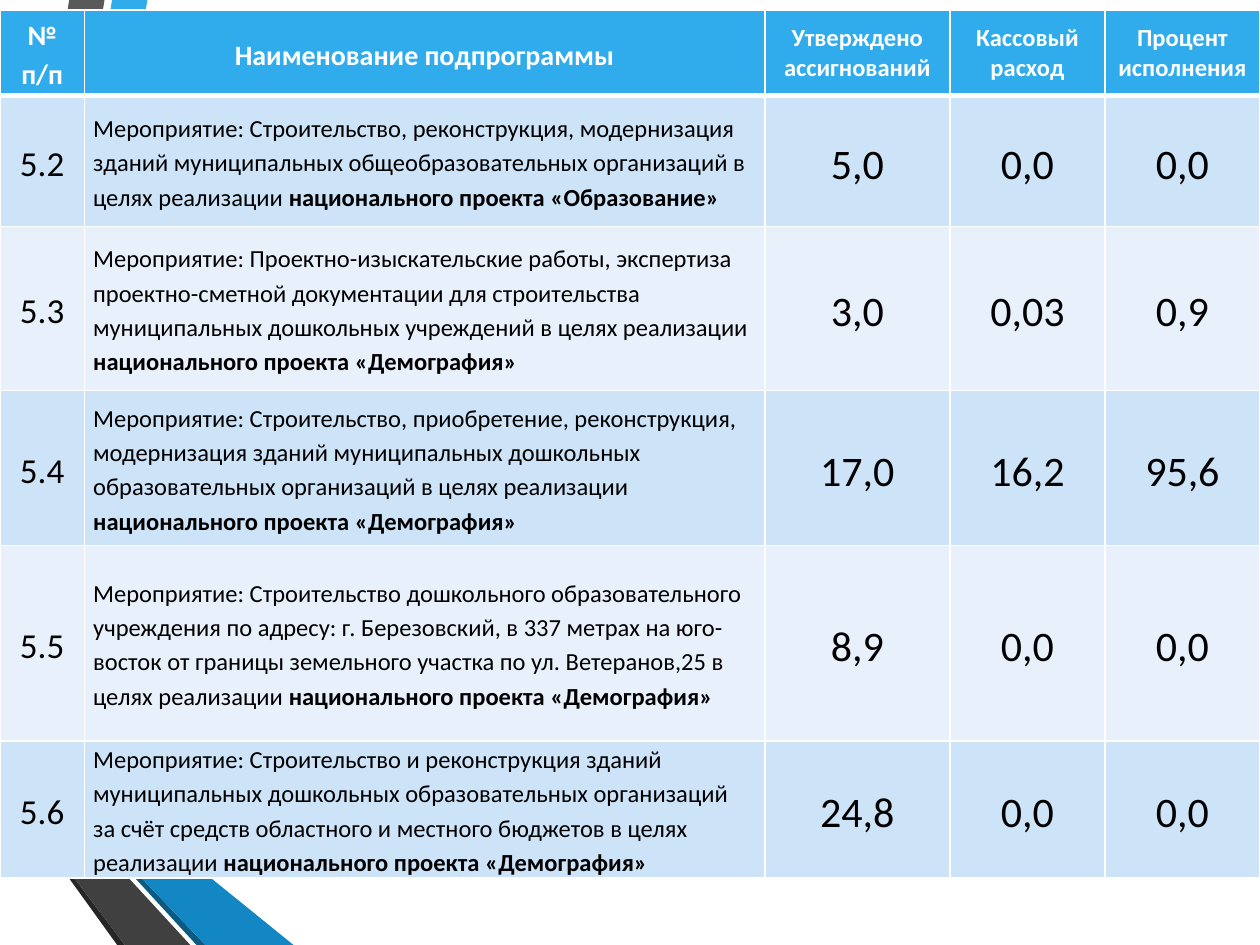
from lxml import etree
from pptx import Presentation
from pptx.dml.color import RGBColor
from pptx.enum.text import MSO_ANCHOR, PP_ALIGN
from pptx.oxml.ns import qn
from pptx.util import Inches, Pt

CENTER, LEFT, MIDDLE = PP_ALIGN.CENTER, PP_ALIGN.LEFT, MSO_ANCHOR.MIDDLE

COLORS = {
    "header": "30ACEC", "band_dark": "CDE3F8", "band_light": "E8F1FB",
    "white": "FFFFFF", "black": "000000", "gray": "595959",
    "charcoal": "404040", "shadow": "262626", "blue": "1287C3", "navy": "0C5A82",
}

WIDTH, HEIGHT = 10, 7.5
TABLE_TOP = 0.08
COLUMN_WIDTHS = [0.67, 5.4, 1.47, 1.23, 1.23]
ROW_HEIGHTS = [0.68, 1.04, 1.3, 1.23, 1.55, 1.01]

# Slanted ribbons, back to front: colour and outline in inches
RIBBONS = [
    ("header", [(0, 5.44), (0, 5.75), (0.22, 5.79), (1.17, 0), (0.89, 0)]),
    ("gray", [(0.83, 0), (0.55, 0), (0, 3.36), (0, 5.06)]),
    ("shadow", [(0, 6.19), (0, 6.21), (0.93, HEIGHT), (0.99, HEIGHT)]),
    ("navy", [(0, 5.79), (0, 5.8), (1.56, HEIGHT), (1.63, HEIGHT)]),
    ("blue", [(0, 5.79), (1.63, HEIGHT), (2.33, HEIGHT), (0.22, 5.79), (0, 5.75)]),
    ("charcoal", [(0, 6.19), (0.99, HEIGHT), (1.51, HEIGHT), (0, 5.86)]),
]

HEADINGS = ["№ п/п", "Наименование подпрограммы", "Утверждено ассигнований",
            "Кассовый расход", "Процент исполнения"]

# Number, work to be done, national project, approved, spent, percent
MEASURES = [
    ("5.2", "Строительство, реконструкция, модернизация зданий муниципальных "
     "общеобразовательных организаций в целях реализации",
     "Образование", "5,0", "0,0", "0,0"),
    ("5.3", "Проектно-изыскательские работы, экспертиза проектно-сметной "
     "документации для строительства муниципальных дошкольных учреждений "
     "в целях реализации",
     "Демография", "3,0", "0,03", "0,9"),
    ("5.4", "Строительство, приобретение, реконструкция, модернизация зданий "
     "муниципальных дошкольных образовательных организаций в целях реализации",
     "Демография", "17,0", "16,2", "95,6"),
    ("5.5", "Строительство дошкольного образовательного учреждения по адресу: "
     "г. Березовский, в 337 метрах на юго-восток от границы земельного участка "
     "по ул. Ветеранов,25 в целях реализации",
     "Демография", "8,9", "0,0", "0,0"),
    ("5.6", "Строительство и реконструкция зданий муниципальных дошкольных "
     "образовательных организаций за счёт средств областного и местного "
     "бюджетов в целях реализации",
     "Демография", "24,8", "0,0", "0,0"),
]

HEADING_SIZES = [16, 16, 14, 14, 14]
HEADING_SPACING = [1.15, 1.15, 1, 1, 1]
BODY_SIZES = [20, 14, 24, 24, 24]
BODY_ALIGN = [CENTER, LEFT, CENTER, CENTER, CENTER]
CELL_FORMAT = {
    "vertical_anchor": MIDDLE, "margin_left": Inches(0.07),
    "margin_right": Inches(0.07), "margin_top": 0, "margin_bottom": 0,
}


def rgb(name):
    return RGBColor.from_string(COLORS[name])


def draw_ribbon(slide, color, points):
    corners = [(Inches(x), Inches(y)) for x, y in points]
    builder = slide.shapes.build_freeform(*corners[0])
    builder.add_line_segments(corners[1:], close=True)
    ribbon = builder.convert_to_shape()
    ribbon.shadow.inherit = False
    ribbon.fill.solid()
    ribbon.fill.fore_color.rgb = rgb(color)
    ribbon.line.fill.background()


def add_borders(cell, row):
    """White rules, with a thick one between the header and the body."""
    widths = {"L": 1, "R": 1, "T": 3 if row == 1 else 1, "B": 3 if row == 0 else 1}
    properties = cell._tc.get_or_add_tcPr()
    for side, width in widths.items():
        border = etree.SubElement(properties, qn(f"a:ln{side}"), w=str(Pt(width)))
        fill = etree.SubElement(border, qn("a:solidFill"))
        etree.SubElement(fill, qn("a:srgbClr"), val=COLORS["white"])


def fill_cell(cell, row, runs, background, color, size, align, spacing):
    """Runs are (text, bold) pairs."""
    for attribute, value in CELL_FORMAT.items():
        setattr(cell, attribute, value)
    add_borders(cell, row)
    cell.fill.solid()
    cell.fill.fore_color.rgb = rgb(background)
    paragraph = cell.text_frame.paragraphs[0]
    paragraph.alignment = align
    paragraph.line_spacing = spacing
    for text, bold in runs:
        run = paragraph.add_run()
        run.text = text
        font_format = {"name": "Calibri", "size": Pt(size), "bold": bold}
        for attribute, value in font_format.items():
            setattr(run.font, attribute, value)
        run.font.color.rgb = rgb(color)


def add_budget_table(slide):
    table = slide.shapes.add_table(
        len(ROW_HEIGHTS), len(COLUMN_WIDTHS), 0, Inches(TABLE_TOP),
        Inches(sum(COLUMN_WIDTHS)), Inches(sum(ROW_HEIGHTS))).table
    table.horz_banding = False
    for column, width in zip(table.columns, COLUMN_WIDTHS):
        column.width = Inches(width)
    for table_row, height in zip(table.rows, ROW_HEIGHTS):
        table_row.height = Inches(height)

    for col, heading in enumerate(HEADINGS):
        fill_cell(table.cell(0, col), 0, [(heading, True)], "header", "white",
                  HEADING_SIZES[col], CENTER, HEADING_SPACING[col])

    for row, (number, work, project, *amounts) in enumerate(MEASURES, 1):
        description = [(f"Мероприятие: {work} ", False),
                       (f"национального проекта «{project}»", True)]
        contents = [[(number, False)], description]
        contents += [[(amount, False)] for amount in amounts]
        band = "band_dark" if row % 2 else "band_light"
        for col, runs in enumerate(contents):
            fill_cell(table.cell(row, col), row, runs, band, "black",
                      BODY_SIZES[col], BODY_ALIGN[col], 1.15)


def main():
    deck = Presentation()
    deck.slide_width, deck.slide_height = Inches(WIDTH), Inches(HEIGHT)
    slide = deck.slides.add_slide(deck.slide_layouts[6])
    for color, points in RIBBONS:
        draw_ribbon(slide, color, points)
    add_budget_table(slide)
    deck.save("out.pptx")


if __name__ == "__main__":
    main()
